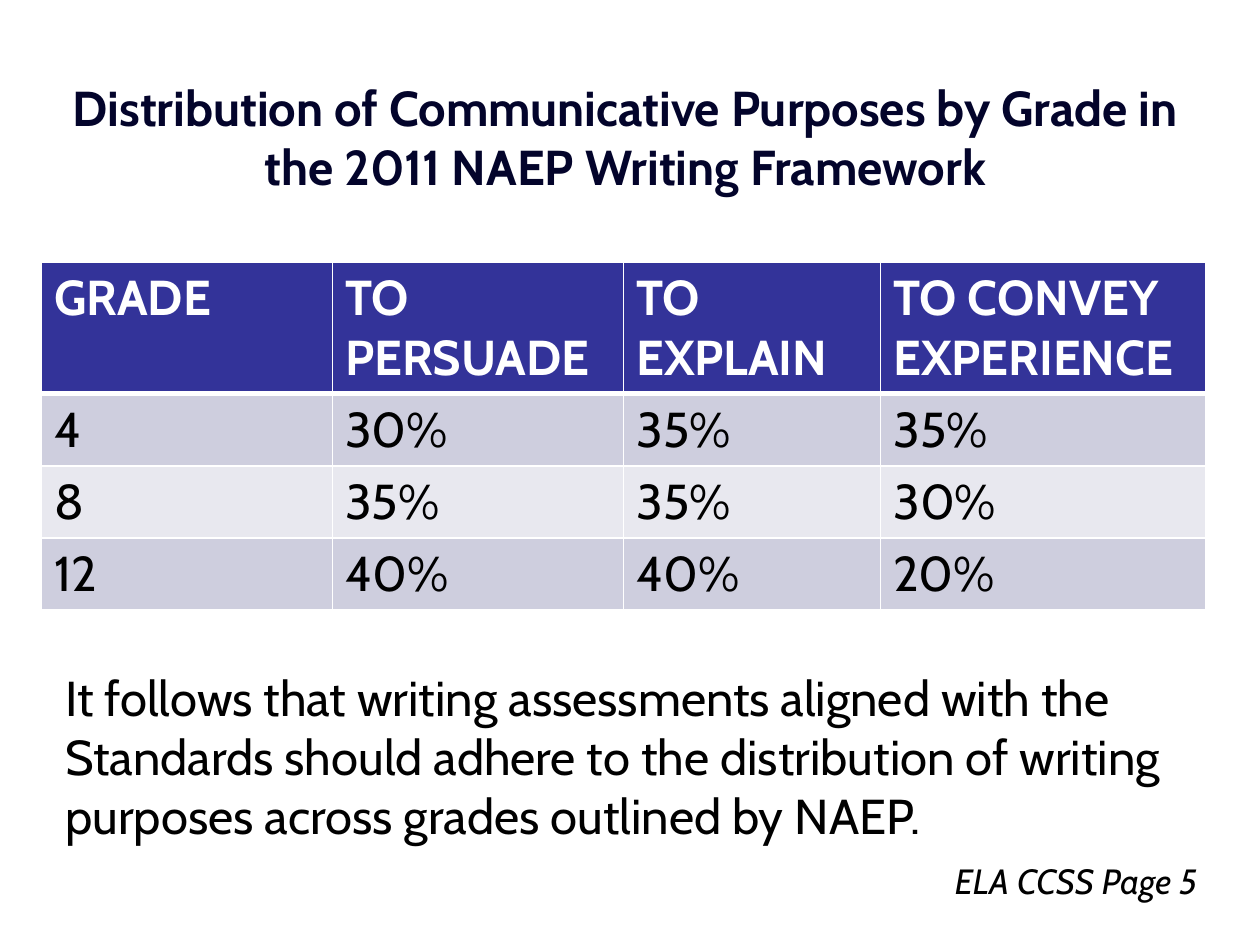
from lxml import etree
from pptx import Presentation
from pptx.dml.color import RGBColor
from pptx.enum import text
from pptx.oxml import ns
from pptx.util import Inches, Pt

# Content
TITLE = "Distribution of Communicative Purposes by Grade in the 2011 NAEP Writing Framework"
PURPOSES = [
    ("GRADE", "TO PERSUADE", "TO EXPLAIN", "TO CONVEY EXPERIENCE"),
    ("4", "30%", "35%", "35%"),
    ("8", "35%", "35%", "30%"),
    ("12", "40%", "40%", "20%"),
]
CONCLUSION = ("It follows that writing assessments aligned with the Standards should adhere "
              "to the distribution of writing purposes across grades outlined by NAEP.")
CITATION = "ELA CCSS Page 5"

THEME = {
    "font": "Cabin", "size": 28, "small": 20,
    "title": "03042B", "text": "000000", "white": "FFFFFF",
    "header": "333399", "bands": ("CECEDE", "E8E8EF"),
    "rule": 1, "header_rule": 3,
}
COLUMN_WIDTHS = (2.31, 2.31, 2.04, 2.58)
HEADER_HEIGHT, ROW_HEIGHT = 1.03, 0.57


def box(*lengths):
    return [Inches(length) for length in lengths]


def style(paragraph, color, size=THEME["size"], bold=False, italic=False):
    font = paragraph.font
    font.name, font.size = THEME["font"], Pt(size)
    font.bold, font.italic = bold, italic
    font.color.rgb = RGBColor.from_string(color)


def add_border(cell, side, width):
    line = etree.SubElement(cell._tc.get_or_add_tcPr(), ns.qn(f"a:ln{side}"), w=str(Pt(width)))
    fill = etree.SubElement(line, ns.qn("a:solidFill"))
    etree.SubElement(fill, ns.qn("a:srgbClr"), val=THEME["white"])


def add_note(slide, words, place, wrap, **look):
    note = slide.shapes.add_textbox(*box(*place)).text_frame
    note.word_wrap = wrap
    note.auto_size = text.MSO_AUTO_SIZE.SHAPE_TO_FIT_TEXT
    note.text = words
    style(note.paragraphs[0], THEME["text"], **look)


def add_title(slide):
    title = slide.shapes.title
    title.left, title.top, title.width, title.height = box(0.17, 0.67, 9.58, 1.25)
    frame = title.text_frame
    frame.text = TITLE
    frame.word_wrap = True
    frame.auto_size = text.MSO_AUTO_SIZE.NONE
    frame.vertical_anchor = text.MSO_ANCHOR.MIDDLE
    frame.margin_top, frame.margin_bottom = box(0, 0.42)  # lifts the lines in the box
    frame.paragraphs[0].alignment = text.PP_ALIGN.CENTER
    style(frame.paragraphs[0], THEME["title"], bold=True)


def add_purposes(slide):
    heights = [HEADER_HEIGHT] + [ROW_HEIGHT] * (len(PURPOSES) - 1)
    table = slide.shapes.add_table(
        len(PURPOSES), len(COLUMN_WIDTHS),
        *box(0.33, 2.08, sum(COLUMN_WIDTHS), sum(heights))).table
    for column, width in zip(table.columns, COLUMN_WIDTHS):
        column.width = Inches(width)
    for r, (values, height) in enumerate(zip(PURPOSES, heights)):
        table.rows[r].height = Inches(height)
        header = r == 0
        fill = THEME["header"] if header else THEME["bands"][(r - 1) % 2]
        rules = {"L": THEME["rule"], "R": THEME["rule"],
                 "T": THEME["header_rule" if r == 1 else "rule"],
                 "B": THEME["header_rule" if header else "rule"]}
        for c, value in enumerate(values):
            cell = table.cell(r, c)
            cell.text = value
            style(cell.text_frame.paragraphs[0],
                  THEME["white" if header else "text"], bold=header)
            for side, width in rules.items():
                add_border(cell, side, width)
            cell.fill.solid()
            cell.fill.fore_color.rgb = RGBColor.from_string(fill)


def main():
    deck = Presentation()
    deck.slide_width, deck.slide_height = box(10, 7.5)
    slide = deck.slides.add_slide(deck.slide_layouts[5])  # title only
    add_title(slide)
    add_purposes(slide)
    # Conclusion and its citation
    add_note(slide, CONCLUSION, (0.42, 5.25, 9.17, 1.51), True)
    add_note(slide, CITATION, (7.48, 6.77, 2.25, 0.44), False,
             size=THEME["small"], italic=True)
    deck.save("out.pptx")


if __name__ == "__main__":
    main()
